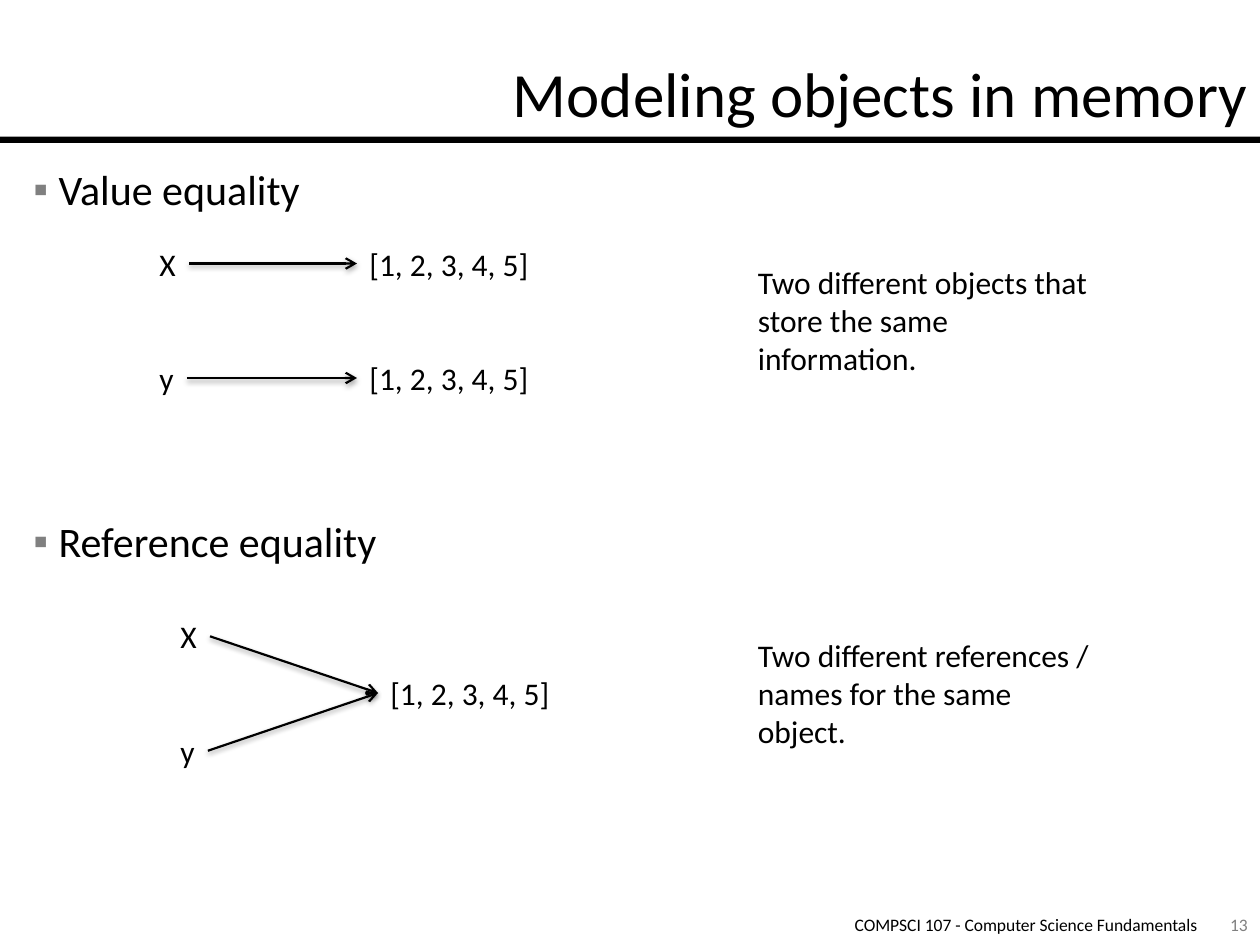
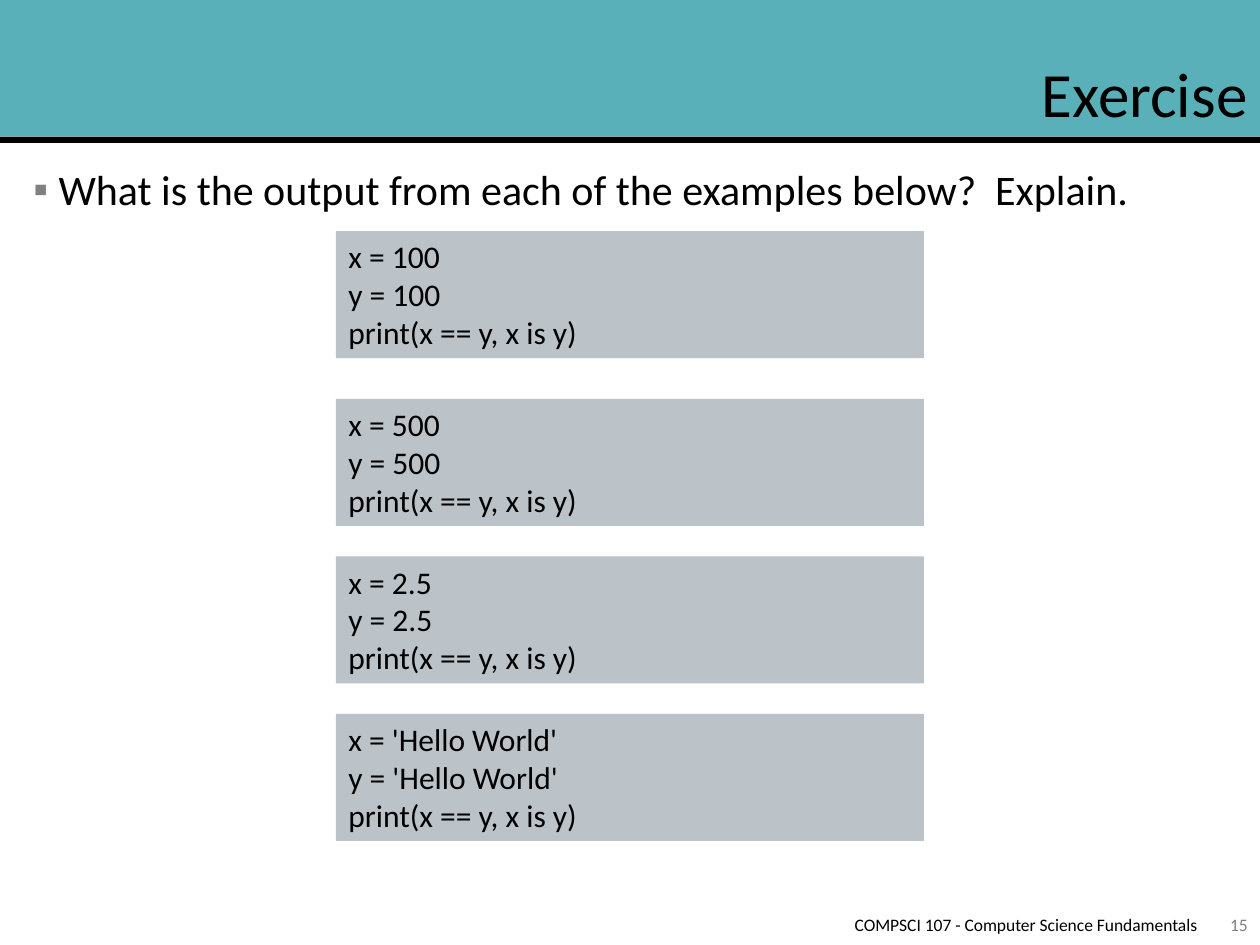
from dataclasses import dataclass

from lxml import etree
from pptx import Presentation
from pptx.dml.color import RGBColor
from pptx.enum.shapes import MSO_CONNECTOR, MSO_SHAPE
from pptx.enum.text import MSO_ANCHOR, MSO_AUTO_SIZE, PP_ALIGN
from pptx.oxml.ns import qn
from pptx.util import Pt

# Scale: 120 px to the inch
EMU_PER_PX = 7620
PAGE_WIDTH, PAGE_HEIGHT = 1200, 900

# Shared colours, font and enum members
BLACK = RGBColor(0x00, 0x00, 0x00)
GREY = RGBColor(0x80, 0x80, 0x80)
TEAL = RGBColor(0x59, 0xB0, 0xB9)
CODE_GREY = RGBColor(0xBB, 0xC3, 0xC9)
FONT = "Calibri"
FOOTER = "COMPSCI 107 - Computer Science Fundamentals"
LEFT, CENTER, RIGHT = PP_ALIGN.LEFT, PP_ALIGN.CENTER, PP_ALIGN.RIGHT
TOP, MIDDLE, BOTTOM = MSO_ANCHOR.TOP, MSO_ANCHOR.MIDDLE, MSO_ANCHOR.BOTTOM
FIT_SHAPE = MSO_AUTO_SIZE.SHAPE_TO_FIT_TEXT
RECTANGLE, STRAIGHT = MSO_SHAPE.RECTANGLE, MSO_CONNECTOR.STRAIGHT


@dataclass(frozen=True)
class Area:
    left: int
    top: int
    width: int
    height: int

    def emu(self) -> list[int]:
        return [px(n) for n in (self.left, self.top, self.width, self.height)]


@dataclass(frozen=True)
class TextStyle:
    size: int
    color: RGBColor = BLACK
    align: PP_ALIGN = LEFT
    anchor: MSO_ANCHOR = TOP


@dataclass(frozen=True)
class Diagram:
    """Names x and y, each pointing at the list at its target top."""
    left: int
    name_tops: tuple[int, int]
    target_tops: tuple[int, int]
    note: str
    note_top: int


@dataclass(frozen=True)
class CodeSample:
    top: int
    value: str


TITLE = TextStyle(36, align=RIGHT, anchor=BOTTOM)
BULLET = TextStyle(24)
BODY = TextStyle(18)
FOOTER_STYLE = TextStyle(10, align=RIGHT, anchor=MIDDLE)
NUMBER = TextStyle(10, GREY, CENTER, MIDDLE)

TITLE_AREA = Area(0, 0, PAGE_WIDTH, 130)
RULE_AREA = Area(0, 130, PAGE_WIDTH, 6)
BULLET_AREA = Area(20, 150, 1160, 710)
FOOTER_AREA = Area(580, 870, 560, 20)
NUMBER_AREA = Area(1150, 870, 60, 20)

NAME_WIDTHS = {"X": 40, "y": 38}
LABEL_HEIGHT = 48
TARGET_OFFSET, TARGET_WIDTH = 200, 178
REFERENCE_GAP = 287

DIAGRAMS = (
    Diagram(140, (227, 336), (227, 336),
            "Two different objects that store the same information.", 245),
    Diagram(160, (582, 691), (636, 636),
            "Two different references / names for the same object.", 600),
)
CODE_SAMPLES = (
    CodeSample(220, "100"),
    CodeSample(380, "500"),
    CodeSample(530, "2.5"),
    CodeSample(680, "'Hello World'"),
)


def px(length: int) -> int:
    return length * EMU_PER_PX


def write(box, lines: list[str], style: TextStyle, **frame_format) -> None:
    """Fill a shape with one paragraph a line."""
    frame = box.text_frame
    settings = {"word_wrap": True, "vertical_anchor": style.anchor, **frame_format}
    for name, value in settings.items():
        setattr(frame, name, value)
    font_format = {"name": FONT, "size": Pt(style.size)}
    for index, line in enumerate(lines):
        para = frame.add_paragraph() if index else frame.paragraphs[0]
        para.alignment = style.align
        span = para.add_run()
        span.text = line
        for name, value in font_format.items():
            setattr(span.font, name, value)
        span.font.color.rgb = style.color


def add_text(page, area: Area, lines: list[str], style: TextStyle, **frame_format):
    box = page.shapes.add_textbox(*area.emu())
    write(box, lines, style, **frame_format)
    return box


def add_panel(page, area: Area, color: RGBColor):
    panel = page.shapes.add_shape(RECTANGLE, *area.emu())
    panel.shadow.inherit = False
    panel.fill.solid()
    panel.fill.fore_color.rgb = color
    panel.line.fill.background()
    return panel


def add_bullets(page, lines: list[str], gap: int = 0) -> None:
    """Square-bulleted text, with a gap before every later paragraph."""
    box = add_text(page, BULLET_AREA, lines, BULLET)
    for index, para in enumerate(box.text_frame.paragraphs):
        if index:
            para.space_before = px(gap)
        props = para._p.get_or_add_pPr()
        props.set("marL", str(px(24)))
        props.set("indent", str(px(-24)))
        color = etree.SubElement(props, qn("a:buClr"))
        etree.SubElement(color, qn("a:srgbClr"), val=str(GREY))
        etree.SubElement(props, qn("a:buFont"), typeface="Arial")
        etree.SubElement(props, qn("a:buChar"), char="▪")


def add_arrow(page, start: tuple[int, int], end: tuple[int, int]) -> None:
    """Thin black arrow with a soft shadow below."""
    arrow = page.shapes.add_connector(STRAIGHT, *[px(n) for n in start + end])
    arrow.line.width = Pt(1.25)
    arrow.line.color.rgb = BLACK
    props = arrow.element.spPr
    etree.SubElement(props.find(qn("a:ln")), qn("a:tailEnd"), type="arrow")
    effects = etree.SubElement(props, qn("a:effectLst"))
    shadow = etree.SubElement(
        effects, qn("a:outerShdw"), blurRad=str(Pt(3.1)), dist=str(Pt(1.6)),
        dir="5400000", rotWithShape="0")
    color = etree.SubElement(shadow, qn("a:srgbClr"), val=str(BLACK))
    etree.SubElement(color, qn("a:alpha"), val="38000")


def add_label(page, left: int, top: int, width: int, text: str) -> None:
    add_text(page, Area(left, top, width, LABEL_HEIGHT), [text], BODY,
             word_wrap=False, auto_size=FIT_SHAPE)


def add_diagram(page, diagram: Diagram) -> None:
    target_left = diagram.left + TARGET_OFFSET
    middle = LABEL_HEIGHT // 2
    for top in sorted(set(diagram.target_tops)):
        add_label(page, target_left, top, TARGET_WIDTH, "[1, 2, 3, 4, 5]")
    rows = zip(NAME_WIDTHS.items(), diagram.name_tops, diagram.target_tops)
    for (name, width), top, target_top in rows:
        add_label(page, diagram.left, top, width, name)
        add_arrow(page, (diagram.left + width, top + middle),
                  (target_left, target_top + middle))
    add_text(page, Area(710, diagram.note_top, 340, 121), [diagram.note], BODY,
             auto_size=FIT_SHAPE)


def add_page(deck, title: str, number: int, band: RGBColor | None = None):
    """Blank page with title, rule, footer and page number."""
    page = deck.slides.add_slide(deck.slide_layouts[6])
    add_panel(page, RULE_AREA, BLACK)
    if band is None:
        add_text(page, TITLE_AREA, [title], TITLE)
    else:
        write(add_panel(page, TITLE_AREA, band), [title], TITLE)
    add_text(page, NUMBER_AREA, [str(number)], NUMBER)
    add_text(page, FOOTER_AREA, [FOOTER], FOOTER_STYLE,
             margin_left=0, margin_right=0, margin_top=0, margin_bottom=0)
    return page


def build_objects_page(deck) -> None:
    page = add_page(deck, "Modeling objects in memory", 13)
    add_bullets(page, ["Value equality", "Reference equality"], REFERENCE_GAP)
    for diagram in DIAGRAMS:
        add_diagram(page, diagram)


def build_exercise_page(deck) -> None:
    page = add_page(deck, "Exercise", 15, TEAL)
    add_bullets(page, ["What is the output from each of the examples below?  Explain."])
    for sample in CODE_SAMPLES:
        panel = add_panel(page, Area(320, sample.top, 560, 121), CODE_GREY)
        lines = [f"x = {sample.value}", f"y = {sample.value}", "print(x == y, x is y)"]
        write(panel, lines, BODY, auto_size=FIT_SHAPE)


def main() -> None:
    deck = Presentation()
    deck.slide_width, deck.slide_height = px(PAGE_WIDTH), px(PAGE_HEIGHT)
    build_objects_page(deck)
    build_exercise_page(deck)
    deck.save("out.pptx")


if __name__ == "__main__":
    main()
